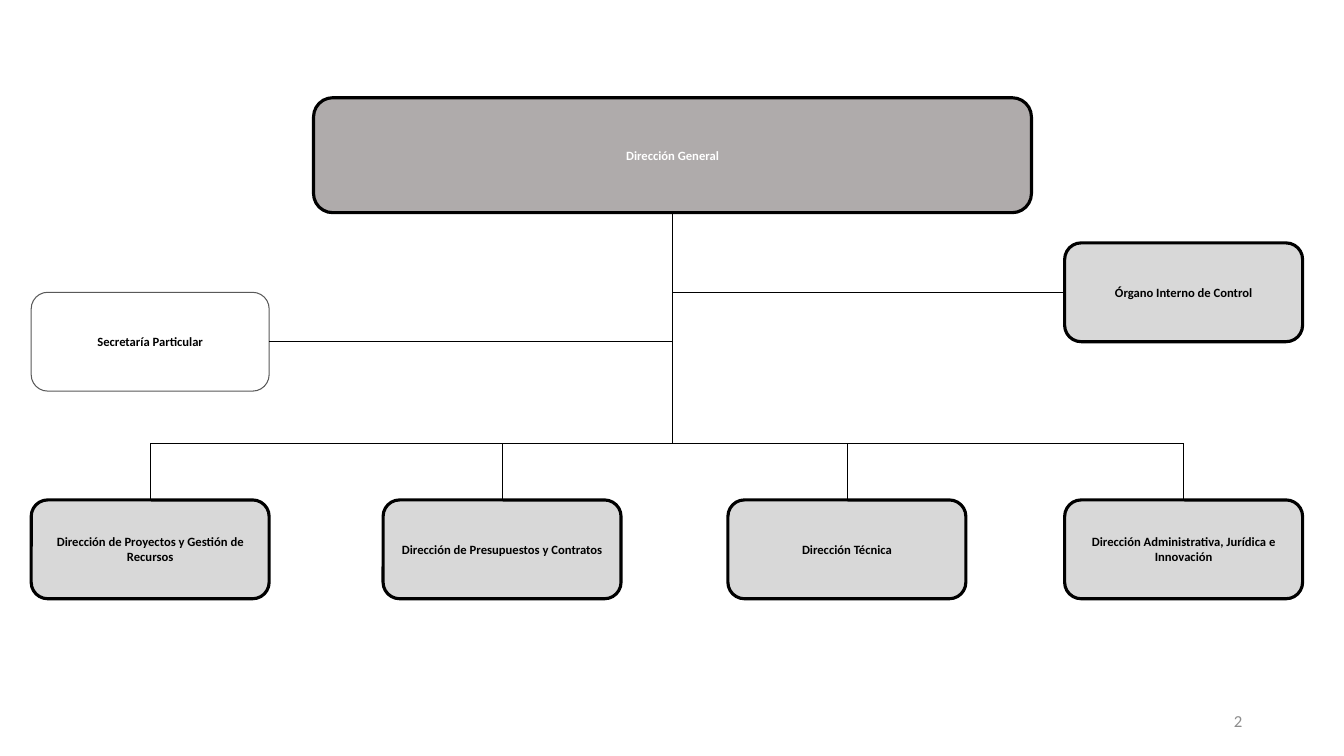
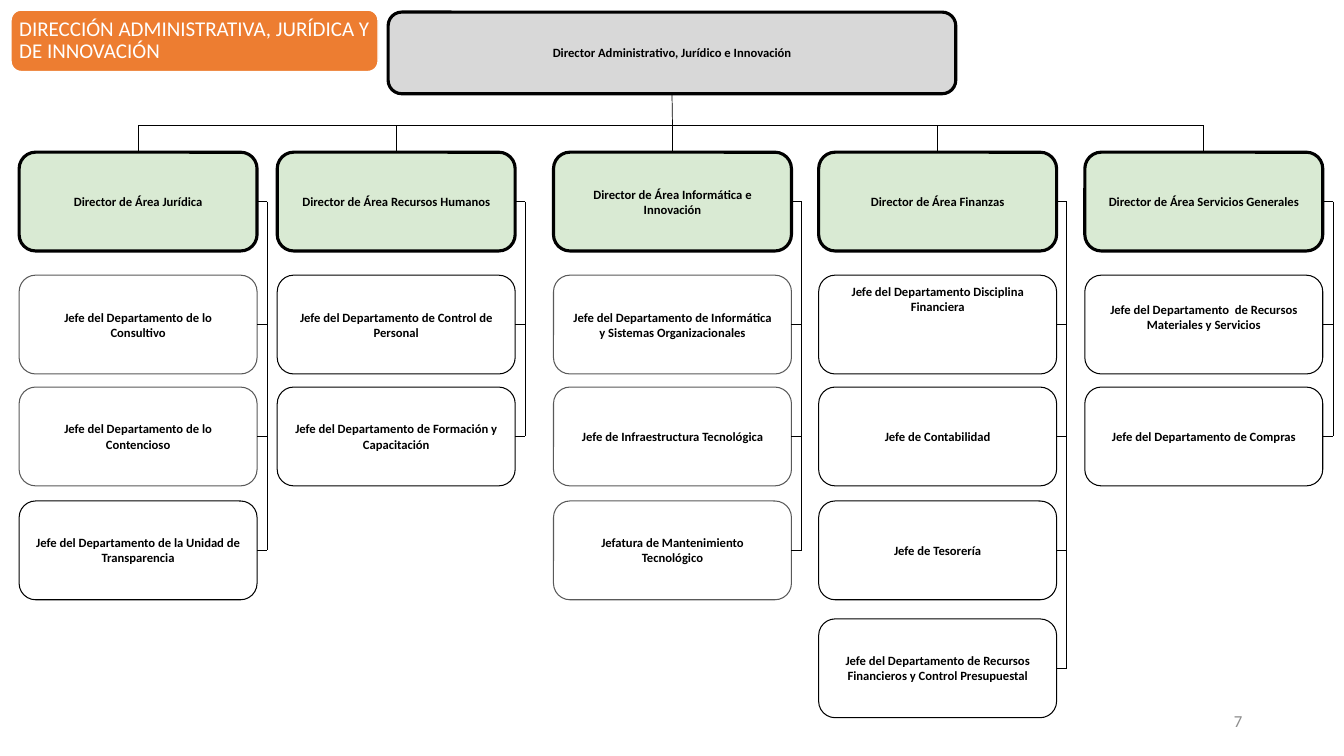
from lxml.etree import SubElement
from pptx import Presentation
from pptx.dml.color import RGBColor
from pptx.enum.shapes import MSO_CONNECTOR as CONNECTOR, MSO_SHAPE as SHAPE
from pptx.enum.text import MSO_ANCHOR as ANCHOR, MSO_AUTO_SIZE as AUTO_SIZE, PP_ALIGN as ALIGN
from pptx.oxml.ns import qn
from pptx.util import Inches, Pt

COLORS = {
    "black": "000000",
    "white": "FFFFFF",
    "outline": "595959",
    "number": "8C8C8C",
    "general": "AFABAB",
    "direction": "D8D8D8",
    "area": "D9EAD3",
    "title": "ED7D31",
}
FONT = "Calibri"
BOX_WIDTH, BOX_HEIGHT = 2.36, 0.98
TOP, LEFT, BOTTOM, RIGHT = range(4)
NUMBER_BOUNDS = (9.42, 6.95, 3, 0.4)
NUMBER_FORMAT = dict(size=12, bold=False, color="number", align=ALIGN.RIGHT, insets=(0.1, 0.05, 0.1, 0.05))


def add_text(slide, bounds, text, holder=None, size=9, bold=True, color="black",
             align=ALIGN.CENTER, anchor=ANCHOR.MIDDLE, insets=(0.13,) * 4,
             fill=None, line=None, weight=2.25, spacing=1.0):
    bounds = [Inches(value) for value in bounds]
    if holder:
        shape = holder
        shape.left, shape.top, shape.width, shape.height = bounds
    elif line:
        shape = slide.shapes.add_shape(SHAPE.ROUNDED_RECTANGLE, *bounds)
        shape.shadow.inherit = False
        shape.line.color.rgb = RGBColor.from_string(COLORS[line])
        shape.line.width = Pt(weight)
        if fill:
            shape.fill.solid()
            shape.fill.fore_color.rgb = RGBColor.from_string(COLORS[fill])
        else:
            shape.fill.background()
    else:
        shape = slide.shapes.add_textbox(*bounds)
    if text:
        frame = shape.text_frame
        frame.word_wrap = True
        frame.auto_size = AUTO_SIZE.NONE
        frame.vertical_anchor = anchor
        frame.margin_left, frame.margin_top, frame.margin_right, frame.margin_bottom = map(Inches, insets)
        paragraph = frame.paragraphs[0]
        paragraph.alignment = align
        paragraph.line_spacing = spacing
        run = paragraph.add_run()
        run.text = text
        run.font.name = FONT
        run.font.size = Pt(size)
        run.font.bold = bold
        run.font.color.rgb = RGBColor.from_string(COLORS[color])
    return shape


def add_line(slide, start, end, shape=None, side=None):
    points = [Inches(value) for value in (*start, *end)]
    connector = slide.shapes.add_connector(CONNECTOR.STRAIGHT, *points)
    if shape:
        connector.begin_connect(shape, side)
    connector.line.color.rgb = RGBColor.from_string(COLORS["black"])
    connector.line.width = Pt(0.5)
    SubElement(connector._element.spPr, qn("a:effectLst"))


presentation = Presentation()
presentation.slide_width = Inches(13.33)
presentation.slide_height = Inches(7.5)
title_only, blank = presentation.slide_layouts[5], presentation.slide_layouts[6]

slide = presentation.slides.add_slide(blank)
add_text(slide, NUMBER_BOUNDS, "2", **NUMBER_FORMAT)
trunk_x, bus_y, direction_top = 6.67, 4.4, 4.96
general = add_text(slide, (3.11, 0.97, 7.12, 1.14), "Dirección General",
                   color="white", fill="general", line="black")
add_line(slide, (trunk_x, 2.11), (trunk_x, bus_y), general, BOTTOM)

directions = [
    (0.31, "Dirección de Proyectos y Gestión de Recursos"),
    (3.8, "Dirección de Presupuestos y Contratos"),
    (7.22, "Dirección Técnica"),
    (10.56, "Dirección Administrativa, Jurídica e Innovación"),
]
for left, text in directions:
    direction = add_text(slide, (left, direction_top, BOX_WIDTH, BOX_HEIGHT), text,
                         fill="direction", line="black")
    center = left + BOX_WIDTH / 2
    add_line(slide, (center, direction_top), (center, bus_y), direction, TOP)
add_line(slide, (directions[0][0] + BOX_WIDTH / 2, bus_y), (directions[-1][0] + BOX_WIDTH / 2, bus_y))

control = add_text(slide, (10.56, 2.41, BOX_WIDTH, BOX_HEIGHT), "Órgano Interno de Control",
                   fill="direction", line="black")
add_line(slide, (10.56, 2.9), (trunk_x, 2.9), control, LEFT)
secretary = add_text(slide, (0.31, 2.9, BOX_WIDTH, BOX_HEIGHT), "Secretaría Particular",
                     line="outline", weight=0.75)
add_line(slide, (2.67, 3.39), (trunk_x, 3.39), secretary, RIGHT)

slide = presentation.slides.add_slide(title_only)
add_text(slide, (0.11, 0.1, 3.64, 0.61), "", fill="title", line="white", weight=1)
title = add_text(slide, (0.13, 0.13, 3.6, 0.55), "DIRECCIÓN ADMINISTRATIVA, JURÍDICA Y DE INNOVACIÓN",
                 holder=slide.shapes.title, size=15, bold=False, color="white",
                 align=ALIGN.LEFT, insets=(0.06,) * 4, spacing=0.9)
slide.shapes._spTree.append(title._element)
add_text(slide, NUMBER_BOUNDS, "7", **NUMBER_FORMAT)

bus_y, area_top, trunk_gap = 1.24, 1.51, 0.1
job_tops = [2.73, 3.84, 4.97, 6.14]
wide = dict(line="outline", weight=0.75)
narrow = dict(line="black", weight=0.75, insets=(0.1,) * 4)
upper = {**narrow, "anchor": ANCHOR.TOP, "insets": (0.1, 0.04, 0.1, 0.1)}
raised = {**narrow, "insets": (0.1, 0.1, 0.1, 0.25)}
areas = [
    (0.19, "Director de Área Jurídica", [
        ("Jefe del Departamento de lo Consultivo", wide),
        ("Jefe del Departamento de lo Contencioso", wide),
        ("Jefe del Departamento de la Unidad de Transparencia", narrow),
    ]),
    (2.75, "Director de Área Recursos Humanos", [
        ("Jefe del Departamento de Control de Personal", narrow),
        ("Jefe del Departamento de Formación y Capacitación", narrow),
    ]),
    (5.49, "Director de Área Informática e Innovación", [
        ("Jefe del Departamento de Informática y Sistemas Organizacionales", wide),
        ("Jefe de Infraestructura Tecnológica", wide),
        ("Jefatura de Mantenimiento Tecnológico", wide),
    ]),
    (8.12, "Director de Área Finanzas", [
        ("Jefe del Departamento Disciplina Financiera", upper),
        ("Jefe de Contabilidad", narrow),
        ("Jefe de Tesorería", narrow),
        ("Jefe del Departamento de Recursos Financieros y Control Presupuestal", narrow),
    ]),
    (10.76, "Director de Área Servicios Generales", [
        ("Jefe del Departamento  de Recursos Materiales y Servicios", raised),
        ("Jefe del Departamento de Compras", narrow),
    ]),
]
director = add_text(slide, (3.85, 0.12, 5.63, 0.81), "Director Administrativo, Jurídico e Innovación",
                    fill="direction", line="black")
add_line(slide, (6.67, 0.93), (6.67, bus_y), director, BOTTOM)
add_line(slide, (areas[0][0] + BOX_WIDTH / 2, bus_y), (areas[-1][0] + BOX_WIDTH / 2, bus_y))

for left, area_name, jobs in areas:
    right, center = left + BOX_WIDTH, left + BOX_WIDTH / 2
    trunk_x = right + trunk_gap
    rows = [(area_top, area_name, dict(fill="area", line="black"))]
    rows += [(top, text, style) for top, (text, style) in zip(job_tops, jobs)]
    for top, text, style in rows:
        box = add_text(slide, (left, top, BOX_WIDTH, BOX_HEIGHT), text, **style)
        middle = top + BOX_HEIGHT / 2
        add_line(slide, (right, middle), (trunk_x, middle), box, RIGHT)
        if top == area_top:
            add_line(slide, (center, top), (center, bus_y), box, TOP)
    add_line(slide, (trunk_x, area_top + BOX_HEIGHT / 2), (trunk_x, middle))

presentation.save("out.pptx")
